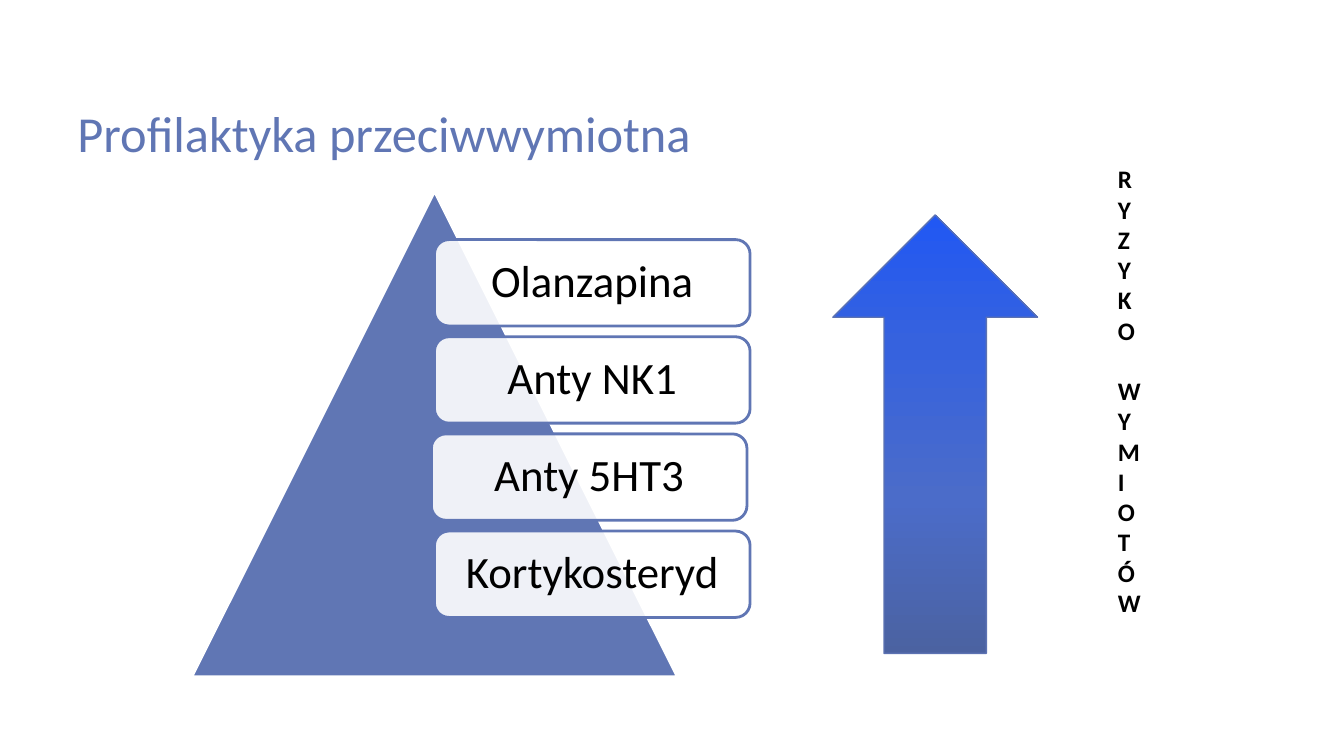
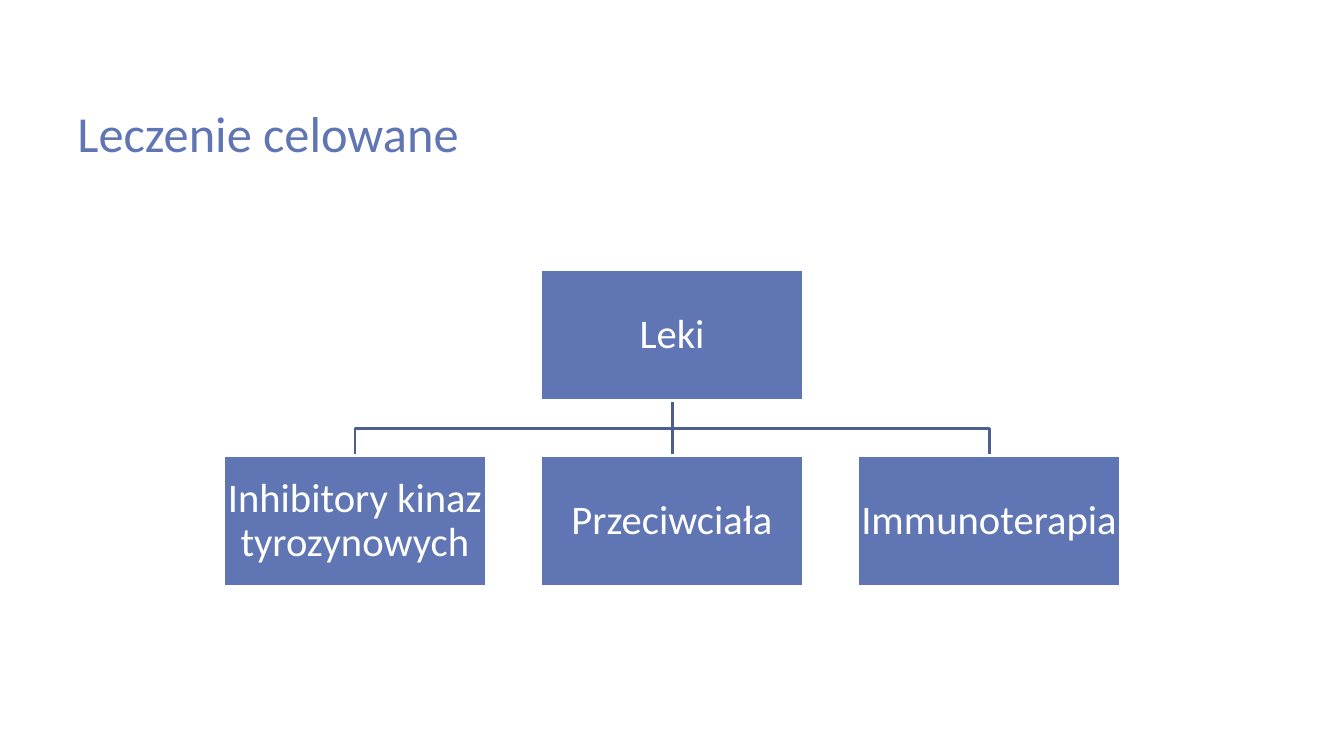
from lxml.etree import SubElement as Sub
from pptx import Presentation
from pptx.dml.color import RGBColor as RGB
from pptx.enum.shapes import MSO_CONNECTOR as Conn, MSO_SHAPE as Kind
from pptx.enum.text import MSO_ANCHOR as Anchor, MSO_AUTO_SIZE as Auto, PP_ALIGN as Align
from pptx.oxml.ns import qn
from pptx.util import Inches, Pt

WIDE, HIGH = Inches(13.333), Inches(7.5)
BLUE, EDGE, WHITE, BLACK = "6076B4", "4D5E90", "FFFFFF", "000000"
FADE = [(0, "4B62A1"), (35, "4B6CC9"), (70, "3662DE"), (100, "2158F3")]
TITLE = (5.03, 5.47, 71.2, 16.67)
DRUGS = ["Olanzapina", "Anty NK1", "Anty 5HT3", "Kortykosteryd"]
TYPES = ["Inhibitory kinaz tyrozynowych", "Przeciwciała", "Immunoterapia"]


def color(text):
    """Turn a hex string into a colour."""
    return RGB.from_string(text)


def place(x, y):
    """Turn percent of the slide's width and height into lengths."""
    return int(WIDE * x / 100), int(HIGH * y / 100)


def frame(x, y, w, h):
    """Turn a percent box into left, top, width and height."""
    return *place(x, y), *place(w, h)


def apply(item, **form):
    """Set each format value on an item."""
    for name, value in form.items():
        setattr(item, name, value)


def write(shape, text, size, ink, pad=None, bold=False, para=None, **form):
    """Put one styled paragraph in a shape."""
    body = shape.text_frame
    apply(body, **{"word_wrap": True, **form})
    if pad is not None:
        sides = ("left", "top", "right", "bottom")
        apply(body, **{f"margin_{side}": Inches(pad) for side in sides})
    line = body.paragraphs[0]
    line.text = text
    apply(line, **(para or {}))
    apply(line.font, name="Calibri", size=Pt(size), bold=bold)
    line.font.color.rgb = color(ink)


def label(slide, box, text, size, ink, **form):
    """Add a text box."""
    shape = slide.shapes.add_textbox(*frame(*box))
    write(shape, text, size, ink, **form)
    return shape


def stroke(shape, ink, width=2):
    """Set the colour and width of a line."""
    shape.line.color.rgb = color(ink)
    shape.line.width = Pt(width)


def block(slide, kind, box, fill, edge, width=2):
    """Add a preset shape with a flat fill and an outline."""
    shape = slide.shapes.add_shape(kind, *frame(*box))
    shape.shadow.inherit = False
    shape.fill.solid()
    shape.fill.fore_color.rgb = color(fill)
    stroke(shape, edge, width)
    return shape


def center(shape, text, size, ink, pad):
    """Write text in the middle of a shape."""
    write(shape, text, size, ink, pad, vertical_anchor=Anchor.MIDDLE,
          para={"alignment": Align.CENTER, "line_spacing": 0.9})


def clear(shape, share):
    """Make a flat fill let the back show through."""
    tint = shape.element.spPr.find(f"{qn('a:solidFill')}/{qn('a:srgbClr')}")
    Sub(tint, qn("a:alpha"), val=str(share * 1000))


def blend(shape, stops):
    """Fill a shape with colours that run from bottom to top."""
    shape.fill.gradient()
    shape.fill.gradient_angle = 90
    group = shape.element.spPr.find(f".//{qn('a:gsLst')}")
    group.clear()
    for spot, tint in stops:
        stop = Sub(group, qn("a:gs"), pos=str(spot * 1000))
        Sub(stop, qn("a:srgbClr"), val=tint)


def lower(slide, shape):
    """Move a shape behind all the others."""
    slide.shapes.element.insert(2, shape.element)


def link(slide, head, tail):
    """Join the bottom of one box to the top of another."""
    line = slide.shapes.add_connector(Conn.STRAIGHT, 0, 0, 0, 0)
    line.begin_connect(head, 2)
    line.end_connect(tail, 0)
    stroke(line, EDGE)
    Sub(line.element.spPr, qn("a:effectLst"))
    lower(slide, line)


def bend(slide, start, *rest):
    """Draw an open line through points, behind the shapes."""
    pen = slide.shapes.build_freeform(*place(*start))
    pen.add_line_segments([place(*spot) for spot in rest], close=False)
    line = pen.convert_to_shape()
    line.shadow.inherit = False
    line.fill.background()
    stroke(line, EDGE)
    lower(slide, line)


def page(deck, title):
    """Add a blank slide with a title."""
    slide = deck.slides.add_slide(deck.slide_layouts[6])
    label(slide, TITLE, title, 36, BLUE, vertical_anchor=Anchor.BOTTOM)
    return slide


def risk(deck):
    """Build the pyramid of drugs against vomiting."""
    slide = page(deck, "Profilaktyka przeciwwymiotna")
    block(slide, Kind.ISOSCELES_TRIANGLE, (14.27, 25.33, 36.13, 64.2), BLUE, WHITE)
    for row, drug in enumerate(DRUGS):
        left = 32.1 if drug == "Anty 5HT3" else 32.33
        card = block(slide, Kind.ROUNDED_RECTANGLE,
                     (left, 31.7 + 12.85 * row, 23.48, 11.42), WHITE, BLUE)
        clear(card, 90)
        center(card, drug, 32, BLACK, 0.13)
    arrow = block(slide, Kind.UP_ARROW, (61.97, 28.43, 15.23, 58), BLUE, "5C72B2", 1)
    blend(arrow, FADE)
    side = label(slide, (82.43, 21, 4.2, 72.8), "RYZYKO WYMIOTÓW", 18, BLACK,
                 bold=True, word_wrap=False, auto_size=Auto.SHAPE_TO_FIT_TEXT)
    side.element.txBody.bodyPr.set("vert", "wordArtVert")


def tree(deck):
    """Build the chart of targeted drugs."""
    slide = page(deck, "Leczenie celowane")
    left, step, wide, tall = 16.67, 23.59, 19.5, 17.33
    top, low = 35.7, 60.27
    base = top + tall
    mid = (base + low) / 2

    def node(col, y, text):
        """Add one box of the chart."""
        shape = block(slide, Kind.RECTANGLE, (left + step * col, y, wide, tall), BLUE, WHITE)
        center(shape, text, 29, WHITE, 0.02)
        return shape

    root = node(1, top, "Leki")
    leaves = [node(col, low, text) for col, text in enumerate(TYPES)]
    first, stem, last = [left + step * col + wide / 2 for col in range(len(TYPES))]
    link(slide, root, leaves[1])
    for spot in (first, last):
        bend(slide, (stem, base), (stem, mid), (spot, mid), (spot, low))


def main():
    """Build and save the deck."""
    deck = Presentation()
    apply(deck, slide_width=WIDE, slide_height=HIGH)
    risk(deck)
    tree(deck)
    deck.save("out.pptx")


if __name__ == "__main__":
    main()
